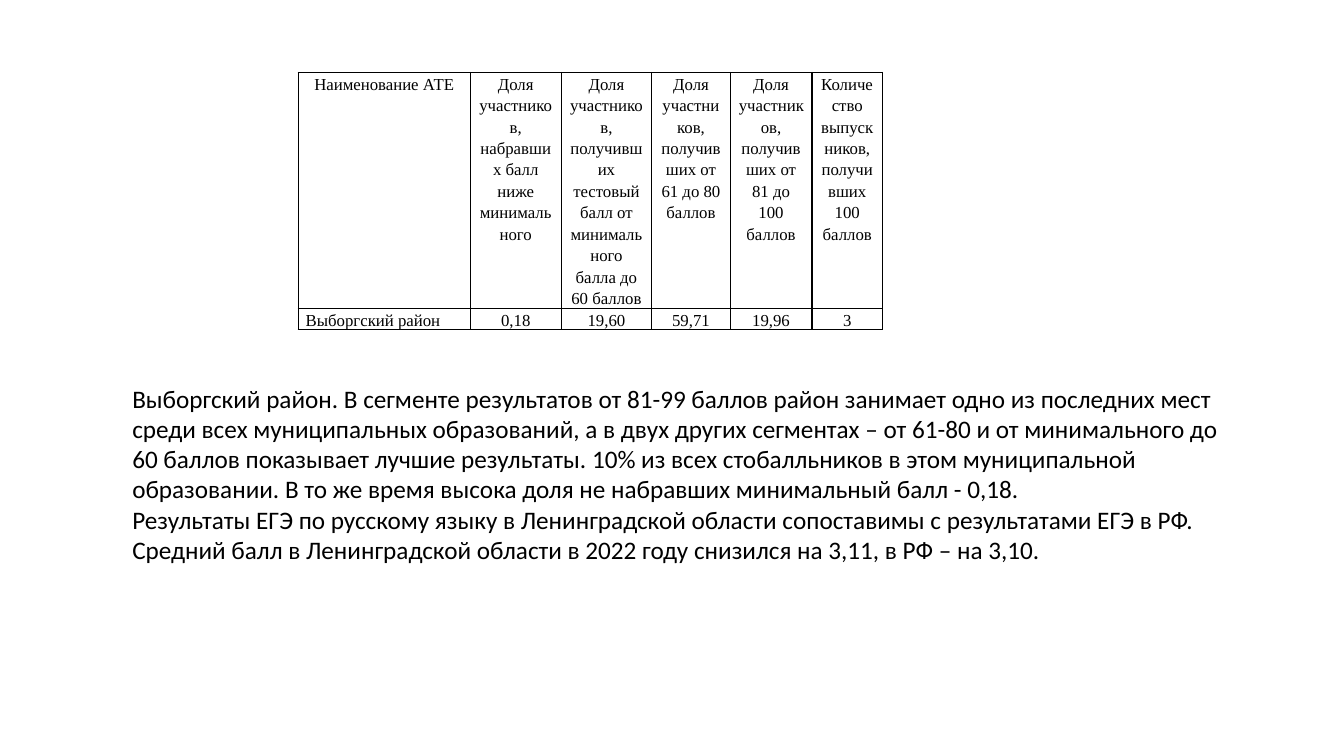
from dataclasses import dataclass

import lxml.etree
import pptx
import pptx.dml.color
import pptx.enum.text
import pptx.oxml.ns
import pptx.util

Pt = pptx.util.Pt
ALIGN = pptx.enum.text.PP_ALIGN
ANCHOR = pptx.enum.text.MSO_ANCHOR
BLACK = "000000"


@dataclass
class Column:
    width: float
    heading: str
    value: str
    value_align: ALIGN = ALIGN.CENTER
    value_anchor: ANCHOR = ANCHOR.MIDDLE


COLUMNS = [
    Column(123, "Наименование АТЕ", "Выборгский район", ALIGN.LEFT, ANCHOR.TOP),
    Column(64.8, "Доля участников, набравших балл ниже минимального", "0,18"),
    Column(64.8, "Доля участников, получивших тестовый балл от минимального балла до 60 баллов", "19,60"),
    Column(56, "Доля участников, получивших от 61 до 80 баллов", "59,71"),
    Column(58.4, "Доля участников, получивших от 81 до 100 баллов", "19,96"),
    Column(50.5, "Количество выпускников, получивших 100 баллов", "3"),
]
ROW_HEIGHTS = [168, 15]
CONCLUSIONS = [
    "Выборгский район. В сегменте результатов от 81-99 баллов район занимает одно из последних мест "
    "среди всех муниципальных образований, а в двух других сегментах – от 61-80 и от минимального до "
    "60 баллов показывает лучшие результаты. 10% из всех стобалльников в этом муниципальной "
    "образовании. В то же время высока доля не набравших минимальный балл - 0,18.",
    "Результаты ЕГЭ по русскому языку в Ленинградской области сопоставимы с результатами ЕГЭ в РФ. "
    "Средний балл в Ленинградской области в 2022 году снизился на 3,11, в РФ – на 3,10.",
]
CELL_FORMAT = {"margin_left": Pt(5.4), "margin_right": Pt(5.4), "margin_top": 0, "margin_bottom": 0}
CELL_PARAGRAPH = {"line_spacing": 1.15, "space_after": Pt(8)}
CELL_FONT = {"name": "Times New Roman", "size": Pt(12)}
BODY_FONT = {"name": "Calibri", "size": Pt(18)}


def rgb(value: str) -> pptx.dml.color.RGBColor:
    return pptx.dml.color.RGBColor.from_string(value)


def set_format(target: object, values: dict) -> None:
    for name, value in values.items():
        setattr(target, name, value)


def add_text(p, text: str, font: dict) -> None:
    r = p.add_run()
    r.text = text
    set_format(r.font, font)
    r.font.color.rgb = rgb(BLACK)


def add_borders(cell, color: str, width: float) -> None:
    qn = pptx.oxml.ns.qn
    tc_pr = cell._tc.get_or_add_tcPr()
    for i, side in enumerate(("lnL", "lnR", "lnT", "lnB")):
        ln = lxml.etree.Element(qn(f"a:{side}"), w=str(Pt(width)))
        fill = lxml.etree.SubElement(ln, qn("a:solidFill"))
        lxml.etree.SubElement(fill, qn("a:srgbClr"), val=color)
        tc_pr.insert(i, ln)


def fill_cell(cell, text: str, align: ALIGN, anchor: ANCHOR) -> None:
    set_format(cell, {**CELL_FORMAT, "vertical_anchor": anchor})
    cell.fill.background()
    add_borders(cell, BLACK, 1)
    p = cell.text_frame.paragraphs[0]
    set_format(p, {**CELL_PARAGRAPH, "alignment": align})
    add_text(p, text, CELL_FONT)


def add_results(s, left: float, top: float) -> None:
    width = sum(col.width for col in COLUMNS)
    frame = s.shapes.add_table(
        len(ROW_HEIGHTS), len(COLUMNS), Pt(left), Pt(top), Pt(width), Pt(sum(ROW_HEIGHTS))
    )
    table = frame.table
    set_format(table, {"first_row": False, "horz_banding": False})
    for row, height in zip(table.rows, ROW_HEIGHTS):
        row.height = Pt(height)
    for i, col in enumerate(COLUMNS):
        table.columns[i].width = Pt(col.width)
        fill_cell(table.cell(0, i), col.heading, ALIGN.CENTER, ANCHOR.TOP)
        fill_cell(table.cell(1, i), col.value, col.value_align, col.value_anchor)


def add_conclusions(s, left: float, top: float, width: float, height: float) -> None:
    sp = s.shapes.add_textbox(Pt(left), Pt(top), Pt(width), Pt(height))
    tf = sp.text_frame
    set_format(tf, {"word_wrap": True, "auto_size": pptx.enum.text.MSO_AUTO_SIZE.SHAPE_TO_FIT_TEXT})
    for i, text in enumerate(CONCLUSIONS):
        p = tf.add_paragraph() if i else tf.paragraphs[0]
        add_text(p, text, BODY_FONT)


def main() -> None:
    prs = pptx.Presentation()
    set_format(prs, {"slide_width": Pt(960), "slide_height": Pt(540)})
    s = prs.slides.add_slide(prs.slide_layouts[6])
    add_results(s, 213, 51.8)
    add_conclusions(s, 87.4, 270, 793, 138)
    prs.save("out.pptx")


if __name__ == "__main__":
    main()
